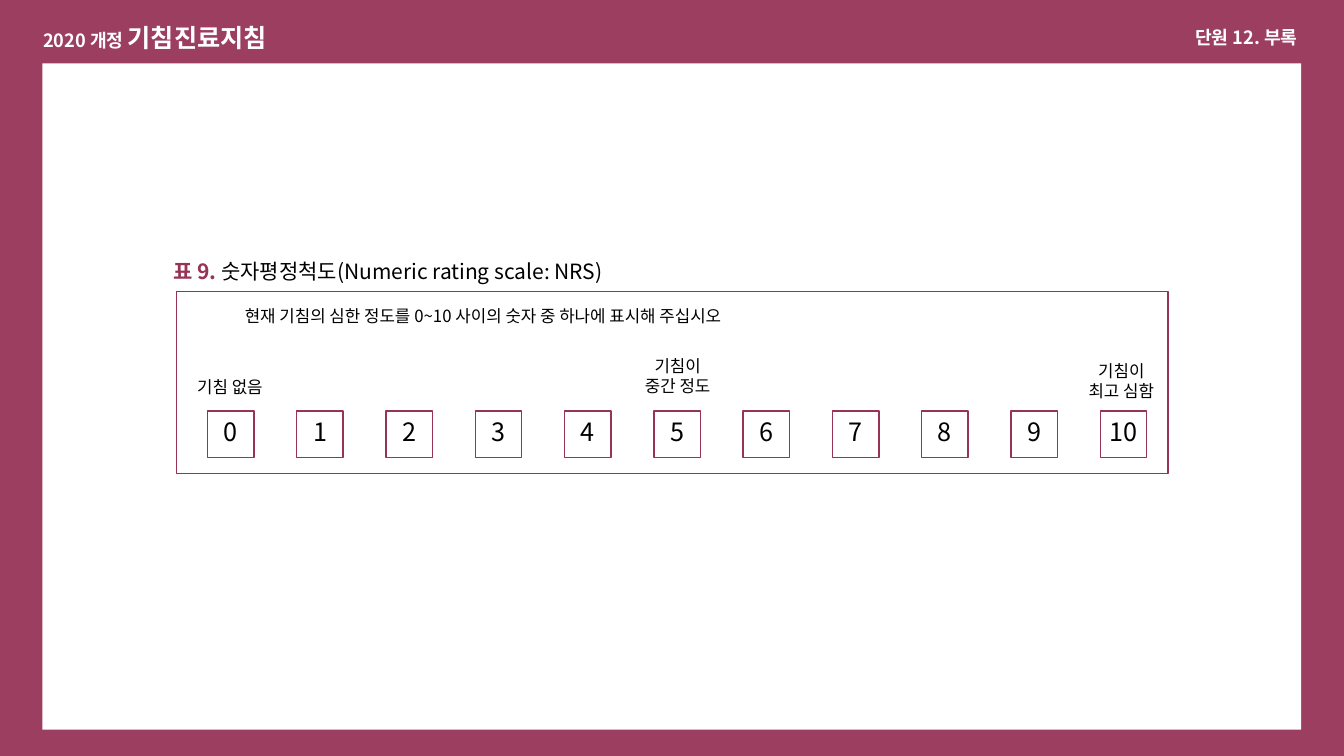
from lxml import etree
from pptx import Presentation
from pptx.dml.color import RGBColor
from pptx.enum.shapes import MSO_SHAPE
from pptx.enum.text import MSO_ANCHOR, MSO_AUTO_SIZE, PP_ALIGN
from pptx.oxml.ns import qn
from pptx.util import Cm, Pt

LEFT, MID, RIGHT = PP_ALIGN.LEFT, PP_ALIGN.CENTER, PP_ALIGN.RIGHT
TOP = MSO_ANCHOR.TOP
FIXED = MSO_AUTO_SIZE.NONE
RECT = MSO_SHAPE.RECTANGLE
WINE = RGBColor(0x97, 0x34, 0x56)
PALE_WINE = RGBColor(0x9C, 0x3E, 0x5F)
WHITE = RGBColor(0xFF, 0xFF, 0xFF)
BLACK = RGBColor(0, 0, 0)
FONT = "Noto Sans CJK KR"


def style(font, size, color, bold=False):
    font.name = FONT
    font.size = Pt(size)
    font.bold = bold
    font.color.rgb = color


def set_asian(para):
    """Use each Latin font of the paragraph for its Korean text too."""
    for latin in list(para._p.iter(qn("a:latin"))):
        asian = etree.Element(qn("a:ea"), typeface=FONT)
        latin.addnext(asian)


def fill_text(frame, lines, size, color, bold=False, align=LEFT):
    frame.word_wrap = True
    frame.auto_size = FIXED
    frame.vertical_anchor = TOP
    frame.text = "\n".join(lines)
    for para in frame.paragraphs:
        para.alignment = align
        style(para.font, size, color, bold)
        set_asian(para)


def fill_runs(frame, runs):
    """Write one paragraph from (text, size, color, bold) runs."""
    frame.word_wrap = True
    frame.auto_size = FIXED
    frame.vertical_anchor = TOP
    para = frame.paragraphs[0]
    para.alignment = LEFT
    for text, *look in runs:
        run = para.add_run()
        run.text = text
        style(run.font, *look)
    set_asian(para)


def add_text(slide, left, top, width, height):
    box = slide.shapes.add_textbox(Cm(left), Cm(top), Cm(width), Cm(height))
    return box.text_frame


def add_rect(slide, left, top, width, height, fill=None, line=None):
    rect = slide.shapes.add_shape(RECT, Cm(left), Cm(top), Cm(width), Cm(height))
    rect.shadow.inherit = False
    if fill is None:
        rect.fill.background()
    else:
        rect.fill.solid()
        rect.fill.fore_color.rgb = fill
    if line is None:
        rect.line.fill.background()
    else:
        rect.line.color.rgb = line
        rect.line.width = Pt(1)
    return rect


def add_header(slide):
    fill_runs(add_text(slide, 0.84, 0.43, 16.41, 1.02),
              [("2020 개정 ", 13, WHITE, True), ("기침진료지침", 18, WHITE, True)])
    fill_text(add_text(slide, 16.54, 0.53, 16.41, 0.81),
              ["단원 12. 부록"], 13, WHITE, True, RIGHT)


def set_title(slide):
    title = slide.shapes.title
    title.left, title.top = Cm(4.11), Cm(6.38)
    title.width, title.height = Cm(16), Cm(0.89)
    fill_runs(title.text_frame,
              [("표 9.", 15, WINE, True),
               (" 숫자평정척도(Numeric rating scale: NRS)", 15, BLACK, False)])


def add_scale(slide):
    for score in range(11):
        square = add_rect(slide, 5.23 + 2.25 * score, 10.36, 1.17, 1.17, line=WINE)
        frame = square.text_frame
        frame.margin_left = frame.margin_right = 0
        fill_text(frame, [str(score)], 18, BLACK, align=MID)


def add_labels(slide):
    labels = [
        (4.72, 9.37, 0.76, ["기침 없음"], LEFT),
        (15.9, 8.84, 1.27, ["기침이", "중간 정도"], MID),
        (27.08, 8.97, 1.27, ["기침이", "최고 심함"], MID),
    ]
    for left, top, height, lines, align in labels:
        fill_text(add_text(slide, left, top, 2.36, height),
                  lines, 12, BLACK, align=align)


def main():
    deck = Presentation()
    deck.slide_width, deck.slide_height = Cm(33.87), Cm(19.05)
    slide = deck.slides.add_slide(deck.slide_layouts[5])
    back = slide.background.fill
    back.solid()
    back.fore_color.rgb = PALE_WINE

    panel = add_rect(slide, 1.07, 1.6, 31.72, 16.79, fill=WHITE)
    slide.shapes.title._element.addprevious(panel._element)
    add_header(slide)
    set_title(slide)
    add_scale(slide)
    fill_text(add_text(slide, 5.92, 7.57, 16.38, 0.76),
              ["현재 기침의 심한 정도를 0~10 사이의 숫자 중 하나에 표시해 주십시오"],
              12, BLACK)
    add_labels(slide)
    add_rect(slide, 4.45, 7.34, 24.99, 4.6, line=WINE)
    deck.save("out.pptx")


if __name__ == "__main__":
    main()
